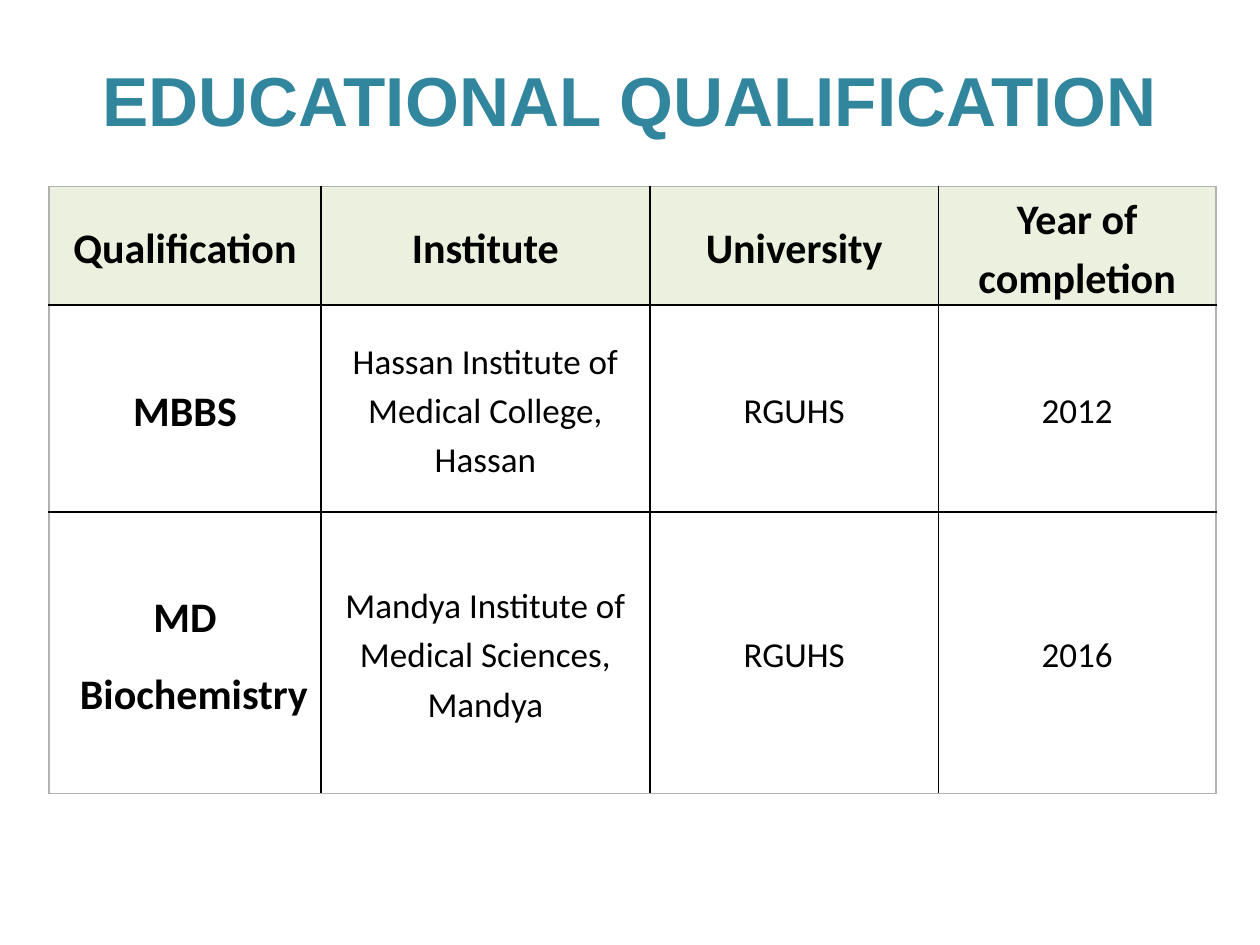
from lxml.etree import SubElement
from pptx import Presentation
from pptx.dml.color import RGBColor
from pptx.enum.text import MSO_ANCHOR, PP_ALIGN
from pptx.oxml.ns import qn
from pptx.util import Cm, Pt

TITLE = "EDUCATIONAL QUALIFICATION"
HEADER = ["Qualification", "Institute", "University", "Year of completion"]
DEGREES = [
    [["MBBS"], ["Hassan Institute of Medical College, Hassan"], ["RGUHS"], ["2012"]],
    [["MD", "Biochemistry"], ["Mandya Institute of Medical Sciences, Mandya"],
     ["RGUHS"], ["2016"]],
]
COLORS = {"title": "31859C", "title_edge": "467AB8", "header": "EBF1DE",
          "text": "000000", "inner": "000000", "outer": "B2B2B2"}
COLUMN_WIDTHS = [5.48, 6.63, 5.82, 5.59]
ROW_HEIGHTS = [2.39, 4.17, 5.68]
SECOND_LINE_INDENT = 0.36


def add_line(parent, tag, color, width):
    line = SubElement(parent, qn(tag), w=str(int(Pt(width))))
    fill = SubElement(line, qn("a:solidFill"))
    SubElement(fill, qn("a:srgbClr"), val=COLORS[color])
    return line


def add_run(paragraph, text, font_name, size, color, bold):
    run = paragraph.add_run()
    run.text = text
    run.font.name, run.font.size, run.font.bold = font_name, Pt(size), bold
    run.font.color.rgb = RGBColor.from_string(COLORS[color])
    return run


def add_title(slide):
    box = slide.shapes.add_textbox(Cm(1.75), Cm(1.02), Cm(21.9), Cm(1.96))
    frame = box.text_frame
    frame.word_wrap = True
    frame.vertical_anchor = MSO_ANCHOR.MIDDLE
    paragraph = frame.paragraphs[0]
    paragraph.alignment = PP_ALIGN.CENTER
    run = add_run(paragraph, TITLE, "Arial", 39.6, "title", True)
    properties = run.font._element
    properties.insert(0, add_line(properties, "a:ln", "title_edge", 0.83))


def fill_cell(cell, lines, is_header, is_bold):
    cell.vertical_anchor = MSO_ANCHOR.MIDDLE
    cell.margin_left = cell.margin_right = Cm(0.18)
    cell.margin_top = cell.margin_bottom = 0
    for index, text in enumerate(lines):
        frame = cell.text_frame
        paragraph = frame.add_paragraph() if index else frame.paragraphs[0]
        paragraph.alignment = PP_ALIGN.CENTER
        paragraph.line_spacing = 1.15
        paragraph.space_after = Pt(10)
        if index:
            indent = str(int(Cm(SECOND_LINE_INDENT)))
            paragraph._p.get_or_add_pPr().set("marL", indent)
        add_run(paragraph, text, "Calibri", 24 if is_bold else 20, "text", is_bold)


def style_cell(cell, is_header, outer_sides):
    properties = cell._tc.get_or_add_tcPr()
    for side in "LRTB":
        add_line(properties, f"a:ln{side}", "outer" if side in outer_sides else "inner", 1)
    if is_header:
        cell.fill.solid()
        cell.fill.fore_color.rgb = RGBColor.from_string(COLORS["header"])
    else:
        cell.fill.background()


def add_degree_table(slide):
    rows = [[[label] for label in HEADER]] + DEGREES
    table = slide.shapes.add_table(
        len(rows), len(HEADER), Cm(0.99), Cm(3.76),
        Cm(sum(COLUMN_WIDTHS)), Cm(sum(ROW_HEIGHTS))).table
    table.horz_banding = table.first_row = False
    for column, width in zip(table.columns, COLUMN_WIDTHS):
        column.width = Cm(width)
    for row, height in zip(table.rows, ROW_HEIGHTS):
        row.height = Cm(height)
    for r, row in enumerate(rows):
        for c, lines in enumerate(row):
            edges = {"L": c == 0, "R": c == len(HEADER) - 1,
                     "T": r == 0, "B": r == len(rows) - 1}
            outer_sides = [side for side, on_edge in edges.items() if on_edge]
            cell = table.cell(r, c)
            fill_cell(cell, lines, r == 0, r == 0 or c == 0)
            style_cell(cell, r == 0, outer_sides)


def main():
    deck = Presentation()
    deck.slide_width, deck.slide_height = Cm(25.4), Cm(19.05)
    slide = deck.slides.add_slide(deck.slide_layouts[6])
    add_title(slide)
    add_degree_table(slide)
    deck.save("out.pptx")


if __name__ == "__main__":
    main()
